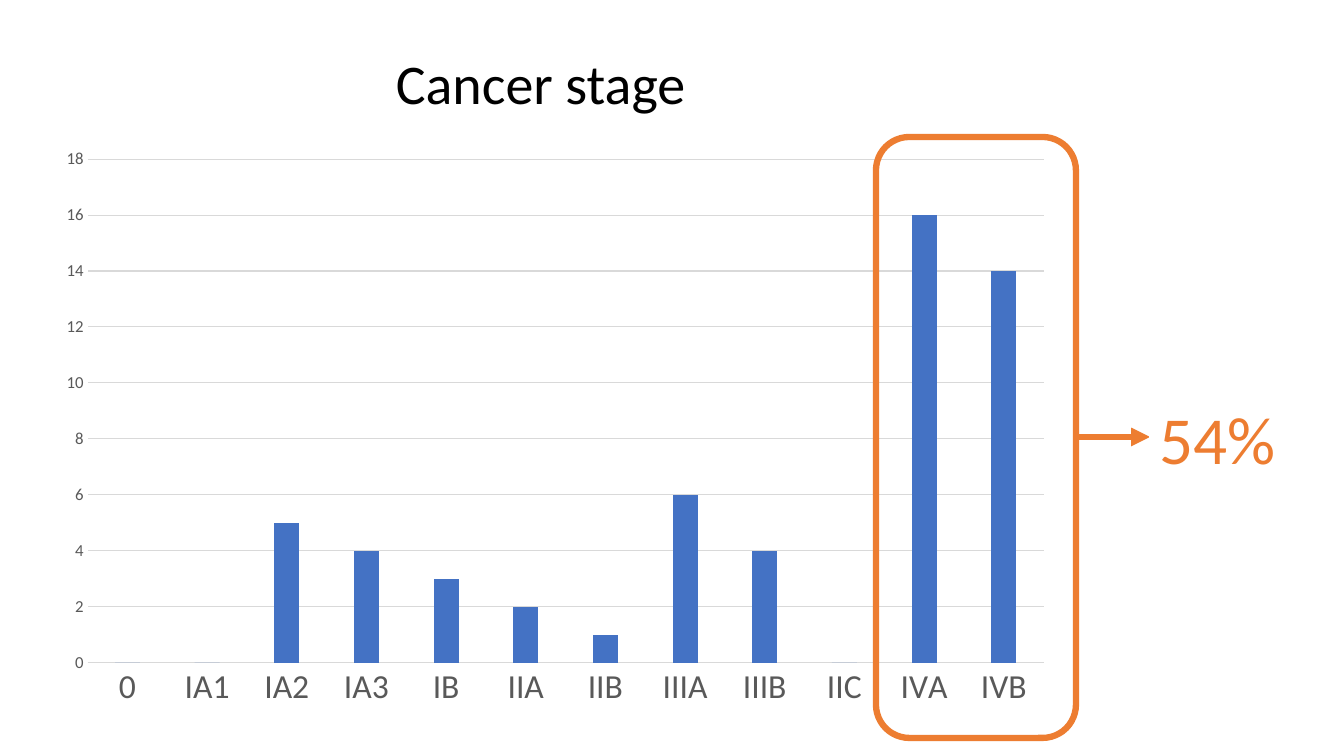
"""Build the cancer stage slide: a column chart with the stage IV share called out."""
from lxml import etree
from pptx import Presentation
from pptx import util as u
from pptx.chart.data import CategoryChartData
from pptx.dml.color import RGBColor
from pptx.enum import chart as ch, shapes, text
from pptx.oxml import parse_xml
from pptx.oxml.ns import nsdecls, qn

STAGES = {"0": 0, "IA1": 0, "IA2": 5, "IA3": 4, "IB": 3, "IIA": 2, "IIB": 1,
          "IIIA": 6, "IIIB": 4, "IIC": 0, "IVA": 16, "IVB": 14}
TITLE = ("Cancer stage", 40, (386, 44, 341, 78))
SHARE = ("54%", 48, (1150, 392, 144, 92))
CHART = (47, 137, 1017, 583)
PLOT = (88, 159, 956, 504)
FRAME = (876, 137, 200, 601)
SLIDE = (1344, 756)

FONT = "Calibri"
BLACK = RGBColor(0x00, 0x00, 0x00)
WHITE = RGBColor(0xFF, 0xFF, 0xFF)
GREY = RGBColor(0x59, 0x59, 0x59)
GRID = RGBColor(0xD9, 0xD9, 0xD9)
BLUE = RGBColor(0x44, 0x72, 0xC4)
ORANGE = RGBColor(0xED, 0x7D, 0x31)
SCALE = 914400 / 100.8


def px(*lengths):
    return [u.Emu(round(length * SCALE)) for length in lengths]


def style_font(font, size, color):
    font.name, font.size, font.bold = FONT, u.Pt(size), False
    font.color.rgb = color


def style_line(line, color, width):
    line.color.rgb = color
    line.width = u.Pt(width)


def write(shape, words, size, color):
    frame = shape.text_frame
    frame.word_wrap = True
    frame.vertical_anchor = text.MSO_ANCHOR.TOP
    para = frame.paragraphs[0]
    para.alignment = text.PP_ALIGN.LEFT
    span = para.add_run()
    span.text = words
    style_font(span.font, size, color)


def add_outline(page, kind, place, color, width):
    shape = page.shapes.add_shape(kind, *px(*place))
    shape.shadow.inherit = False
    shape.fill.background()
    style_line(shape.line, color, width)
    return shape


def fix_plot(chart):
    left, top, width, height = CHART
    x, y, w, h = PLOT
    shares = {"x": (x - left) / width, "y": (y - top) / height,
              "w": w / width, "h": h / height}
    parts = "".join(f'<c:{name} val="{share:.3f}"/>' for name, share in shares.items())
    layout = parse_xml(
        f'<c:layout {nsdecls("c")}><c:manualLayout><c:layoutTarget val="inner"/>'
        f'<c:xMode val="edge"/><c:yMode val="edge"/>{parts}</c:manualLayout></c:layout>')
    area = chart.element.find(".//" + qn("c:plotArea"))
    for old in area.findall(qn("c:layout")):
        area.remove(old)
    area.insert(0, layout)


def add_stage_chart(page):
    data = CategoryChartData()
    data.categories = list(STAGES)
    data.add_series("Series 1", list(STAGES.values()))
    chart = page.shapes.add_chart(
        ch.XL_CHART_TYPE.COLUMN_CLUSTERED, *px(*CHART), data).chart
    chart.has_title = chart.has_legend = False
    style_font(chart.font, 10, BLACK)
    plot = chart.plots[0]
    plot.vary_by_categories = False
    plot.gap_width, plot.overlap = 219, -27
    bars = plot.series[0].format.fill
    bars.solid()
    bars.fore_color.rgb = BLUE
    stages, counts = chart.category_axis, chart.value_axis
    for axis, size in ((stages, 24), (counts, 12)):
        axis.major_tick_mark = axis.minor_tick_mark = ch.XL_TICK_MARK.NONE
        style_font(axis.tick_labels.font, size, GREY)
    style_line(stages.format.line, GRID, 0.75)
    counts.format.line.fill.background()
    counts.has_major_gridlines = True
    style_line(counts.major_gridlines.format.line, GRID, 0.75)
    counts.minimum_scale, counts.maximum_scale, counts.major_unit = 0, 18, 2
    fix_plot(chart)


def add_arrow(page):
    left, top, width, height = FRAME
    middle = top + height // 2
    arrow = page.shapes.add_connector(
        shapes.MSO_CONNECTOR.STRAIGHT, *px(left + width, middle, SHARE[2][0], middle))
    style_line(arrow.line, ORANGE, 4.5)
    etree.SubElement(arrow.line._get_or_add_ln(), qn("a:tailEnd"), type="triangle")
    etree.SubElement(arrow._element.spPr, qn("a:effectLst"))


def main():
    deck = Presentation()
    deck.slide_width, deck.slide_height = px(*SLIDE)
    page = deck.slides.add_slide(deck.slide_layouts[6])
    add_stage_chart(page)
    words, size, place = TITLE
    write(page.shapes.add_textbox(*px(*place)), words, size, BLACK)
    add_outline(page, shapes.MSO_SHAPE.ROUNDED_RECTANGLE, FRAME, ORANGE, 4.5)
    add_arrow(page)
    words, size, place = SHARE
    box = add_outline(page, shapes.MSO_SHAPE.RECTANGLE, place, WHITE, 0.75)
    write(box, words, size, ORANGE)
    deck.save("out.pptx")


if __name__ == "__main__":
    main()
